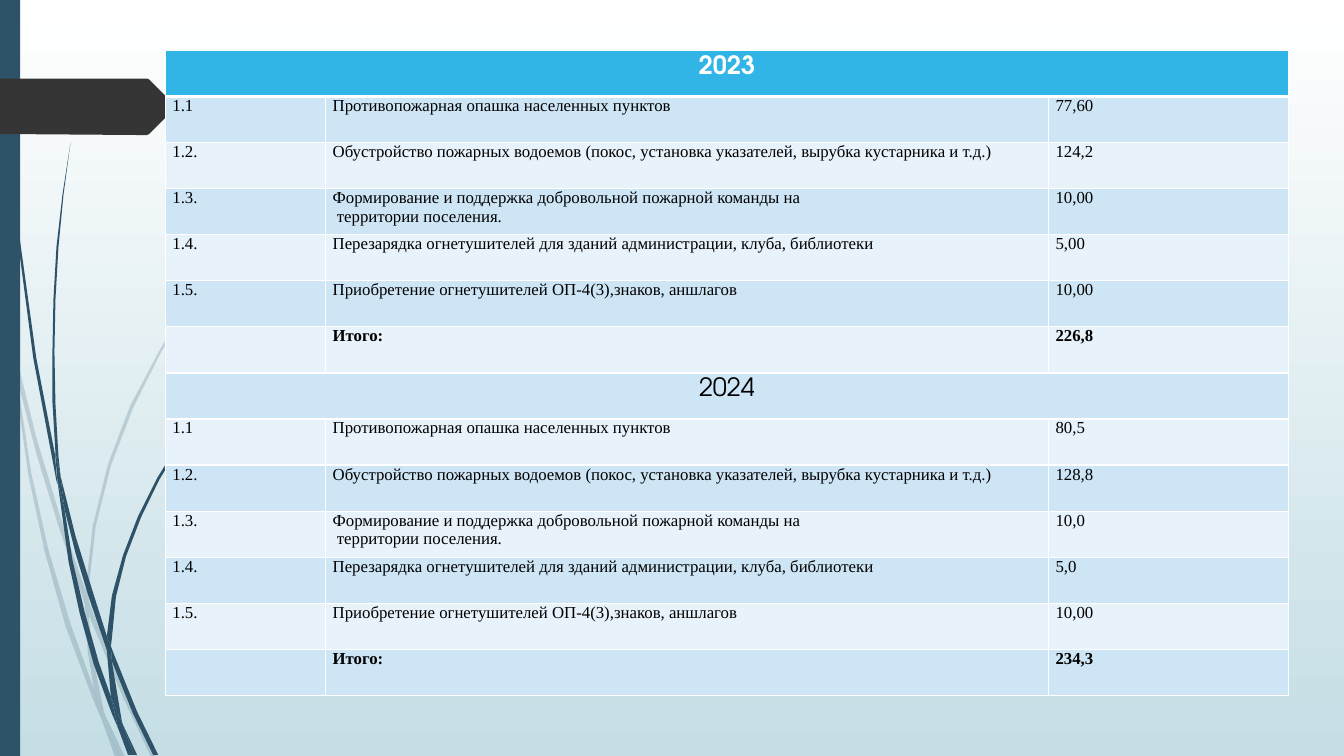
from dataclasses import dataclass
from typing import NamedTuple

from lxml.etree import SubElement
from pptx import Presentation
from pptx.dml.color import RGBColor
from pptx.enum.shapes import MSO_SHAPE
from pptx.enum.text import PP_ALIGN
from pptx.oxml.ns import qn
from pptx.util import Inches, Pt


@dataclass(frozen=True)
class Theme:
    white: str = "FFFFFF"
    sky: str = "C5DEE5"
    navy: str = "2E5369"
    charcoal: str = "353535"
    header: str = "31B4E6"
    bands: tuple[str, str] = ("E8F2FA", "CEE5F5")
    ink: str = "000000"
    year_font: str = "TeX Gyre Adventor"
    body_font: str = "Times New Roman"
    year_size: int = 18
    body_size: int = 12


class Outline(NamedTuple):
    points: list[tuple[float, float]]
    color: str
    opacity: int = 100


class YearPlan(NamedTuple):
    year: str
    amounts: list[str]
    total: str


THEME = Theme()

MEASURES = [
    ("1.1", ["Противопожарная опашка населенных пунктов"]),
    ("1.2.", ["Обустройство пожарных водоемов (покос, установка указателей, вырубка кустарника и т.д.)"]),
    ("1.3.", ["Формирование и поддержка добровольной пожарной команды на", " территории поселения."]),
    ("1.4.", ["Перезарядка огнетушителей для зданий администрации, клуба, библиотеки"]),
    ("1.5.", ["Приобретение огнетушителей ОП-4(3),знаков, аншлагов"]),
]
PLANS = [
    YearPlan("2023", ["77,60", "124,2", "10,00", "5,00", "10,00"], "226,8"),
    YearPlan("2024", ["80,5", "128,8", "10,0", "5,0", "10,00"], "234,3"),
]

# Grass blades, each an outline in inches
PALE_BLADES = [
    [(0.58, 5.22), (0.84, 5.99), (0.85, 5.86), (0.62, 5.2), (0.36, 4.34), (0.14, 3.45), (0.17, 3.76), (0.36, 4.5)],
    [(0.92, 6.07), (0.88, 5.96), (0.88, 6.1), (1.23, 6.94), (1.5, 7.51), (1.55, 7.51), (1.27, 6.92)],
    [(1.19, 7.51), (1.24, 7.51), (1.05, 7.11)],
    [(0.93, 6.83), (0.7, 6.19), (0.48, 5.45), (0.31, 4.69), (0.17, 3.76), (0.11, 3.5), (0.28, 4.7),
     (0.44, 5.46), (0.65, 6.21), (0.92, 6.93), (1.01, 7.14), (0.99, 7.07)],
    [(0.84, 5.99), (0.87, 6.46), (0.93, 6.83), (0.96, 6.92), (1.05, 7.11), (1.03, 7.06), (0.91, 6.46),
     (0.88, 6.1), (0.88, 6.08)],
    [(0.88, 5.84), (0.95, 5.22), (1.1, 4.62), (1.32, 4.05), (1.6, 3.49), (1.93, 2.96), (2.29, 2.45),
     (2.68, 1.98), (2.9, 1.75), (3.12, 1.54), (3.12, 1.53), (2.89, 1.75), (2.68, 1.97), (2.28, 2.44),
     (1.91, 2.95), (1.58, 3.48), (1.29, 4.03), (1.07, 4.61), (0.92, 5.22), (0.85, 5.84), (0.85, 5.86), (0.88, 5.96)],
    [(1.01, 7.14), (1.14, 7.51), (1.19, 7.51)],
    [(0.88, 6.08), (0.88, 6.1), (0.88, 5.96), (0.85, 5.86), (0.84, 5.99)],
    [(0.96, 6.92), (0.93, 6.83), (0.99, 7.07), (1.01, 7.14), (1.19, 7.51), (1.05, 7.11)],
]
DARK_BLADES = [
    [(0.07, 1.1), (0.17, 2.33), (0.33, 3.55), (0.56, 4.77), (0.57, 4.81), (0.55, 4.57), (0.55, 4.53),
     (0.36, 3.55), (0.19, 2.32), (0.08, 1.09), (0.05, 0.48), (0.04, 0), (0.03, 0), (0.04, 0.48)],
    [(0.88, 5.92), (1.06, 6.45), (1.06, 6.31), (0.93, 5.9), (0.75, 5.32), (0.6, 4.72), (0.64, 5.05), (0.75, 5.49)],
    [(1.13, 6.49), (1.1, 6.41), (1.11, 6.56), (1.32, 7.08), (1.52, 7.49), (1.57, 7.49), (1.36, 7.06)],
    [(1.1, 6.91), (0.98, 6.57), (0.84, 6.07), (0.72, 5.56), (0.64, 5.05), (0.57, 4.77), (0.68, 5.57),
     (0.79, 6.08), (0.93, 6.59), (1.11, 7.08), (1.17, 7.22), (1.16, 7.17)],
    [(0.6, 4.72), (0.58, 4.53), (0.55, 4.01), (0.54, 3.49), (0.55, 2.97), (0.58, 2.45), (0.63, 1.93),
     (0.7, 1.41), (0.62, 1.93), (0.56, 2.45), (0.53, 2.97), (0.52, 3.49), (0.52, 3.99), (0.55, 4.49)],
    [(1.33, 7.49), (1.36, 7.49), (1.22, 7.19)],
    [(0.57, 4.77), (0.64, 5.05), (0.6, 4.72), (0.55, 4.49), (0.55, 4.53)],
    [(1.11, 6.33), (1.15, 5.92), (1.25, 5.52), (1.4, 5.13), (1.58, 4.76), (1.8, 4.4), (2.05, 4.06),
     (2.31, 3.74), (2.45, 3.59), (2.61, 3.44), (2.6, 3.44), (2.45, 3.58), (2.31, 3.73), (2.04, 4.05),
     (1.78, 4.39), (1.56, 4.74), (1.37, 5.12), (1.22, 5.51), (1.11, 5.91), (1.06, 6.31), (1.1, 6.41)],
    [(1.17, 7.22), (1.27, 7.49), (1.31, 7.49)],
    [(1.06, 6.45), (1.1, 6.91), (1.16, 7.06), (1.22, 7.19), (1.21, 7.16), (1.11, 6.56), (1.09, 6.51)],
    [(1.06, 6.45), (1.09, 6.51), (1.11, 6.56), (1.1, 6.41), (1.06, 6.31)],
    [(1.16, 7.06), (1.1, 6.91), (1.16, 7.17), (1.17, 7.22), (1.3, 7.49), (1.33, 7.49), (1.22, 7.19)],
]
PAGE_TAG = [(0, 0.78), (1.46, 0.78), (1.48, 0.79), (1.73, 1.04), (1.74, 1.06), (1.73, 1.08),
            (1.48, 1.33), (1.46, 1.34), (1.36, 1.34), (0, 1.33)]


def rgb(color: str) -> RGBColor:
    return RGBColor.from_string(color)


def paint(shape, color: str, opacity: int = 100) -> None:
    shape.shadow.inherit = False
    shape.line.fill.background()
    shape.fill.solid()
    shape.fill.fore_color.rgb = rgb(color)
    if opacity < 100:
        solid_color = shape.element.spPr.find(qn("a:solidFill"))[0]
        SubElement(solid_color, qn("a:alpha"), val=str(opacity * 1000))


def draw_outline(slide, outline: Outline) -> None:
    start, *others = [(Inches(x), Inches(y)) for x, y in outline.points]
    builder = slide.shapes.build_freeform(*start)
    builder.add_line_segments(others, close=True)
    paint(builder.convert_to_shape(), outline.color, outline.opacity)


def set_borders(cell, bottom: float = 1) -> None:
    properties = cell._tc.get_or_add_tcPr()
    sides = [("a:lnL", 1), ("a:lnR", 1), ("a:lnT", 1), ("a:lnB", bottom)]
    for position, (side, width) in enumerate(sides):
        line = properties.makeelement(qn(side), {"w": str(int(Pt(width)))})
        fill = SubElement(line, qn("a:solidFill"))
        SubElement(fill, qn("a:srgbClr"), val=THEME.white)
        properties.insert(position, line)


def write_cell(cell, lines: list[str], bold: bool = False, color: str = THEME.ink, is_year: bool = False) -> None:
    cell.margin_left = cell.margin_right = Inches(0.1 if is_year else 0.07)
    cell.margin_top = cell.margin_bottom = Inches(0.05 if is_year else 0)
    frame = cell.text_frame
    for index, line in enumerate(lines):
        paragraph = frame.paragraphs[0] if index == 0 else frame.add_paragraph()
        paragraph.alignment = PP_ALIGN.CENTER if is_year else PP_ALIGN.LEFT
        run = paragraph.add_run()
        run.text = line
        run.font.name = THEME.year_font if is_year else THEME.body_font
        run.font.size = Pt(THEME.year_size if is_year else THEME.body_size)
        run.font.bold = bold
        run.font.color.rgb = rgb(color)


def draw_table(slide) -> None:
    block = len(MEASURES) + 2
    row_count = block * len(PLANS)
    table = slide.shapes.add_table(row_count, 3, Inches(1.64), Inches(0.5), Inches(11.14), Inches(6.4)).table
    for column, width in zip(table.columns, (1.59, 7.17, 2.38)):
        column.width = Inches(width)

    # Fills and borders
    for index in range(row_count):
        for cell in table.rows[index].cells:
            cell.fill.solid()
            cell.fill.fore_color.rgb = rgb(THEME.bands[index % 2] if index else THEME.header)
            set_borders(cell, bottom=1 if index else 3)

    # Year heading, measures and total
    for number, plan in enumerate(PLANS):
        top = number * block
        is_header = number == 0
        table.cell(top, 0).merge(table.cell(top, 2))
        write_cell(table.cell(top, 0), [plan.year], is_header, THEME.white if is_header else THEME.ink, is_year=True)
        for row, ((code, name), amount) in enumerate(zip(MEASURES, plan.amounts), top + 1):
            for column, lines in enumerate(([code], name, [amount])):
                write_cell(table.cell(row, column), lines)
        for column, text in enumerate(("Итого:", plan.total), 1):
            write_cell(table.cell(top + block - 1, column), [text], bold=True)


def main() -> None:
    presentation = Presentation()
    presentation.slide_width, presentation.slide_height = Inches(13.33), Inches(7.5)
    slide = presentation.slides.add_slide(presentation.slide_layouts[6])

    # Background
    background = slide.background.fill
    background.gradient()
    background.gradient_angle = 270
    for stop, position, color in zip(background.gradient_stops, (0, 1), (THEME.white, THEME.sky)):
        stop.position = position
        stop.color.rgb = rgb(color)

    # Grass, side bar and page tag
    for points in PALE_BLADES:
        draw_outline(slide, Outline(points, THEME.navy, 20))
    for points in DARK_BLADES:
        draw_outline(slide, Outline(points, THEME.navy))
    side_bar = slide.shapes.add_shape(MSO_SHAPE.RECTANGLE, 0, 0, Inches(0.2), Inches(7.5))
    paint(side_bar, THEME.navy)
    draw_outline(slide, Outline(PAGE_TAG, THEME.charcoal))

    draw_table(slide)
    presentation.save("out.pptx")


if __name__ == "__main__":
    main()
